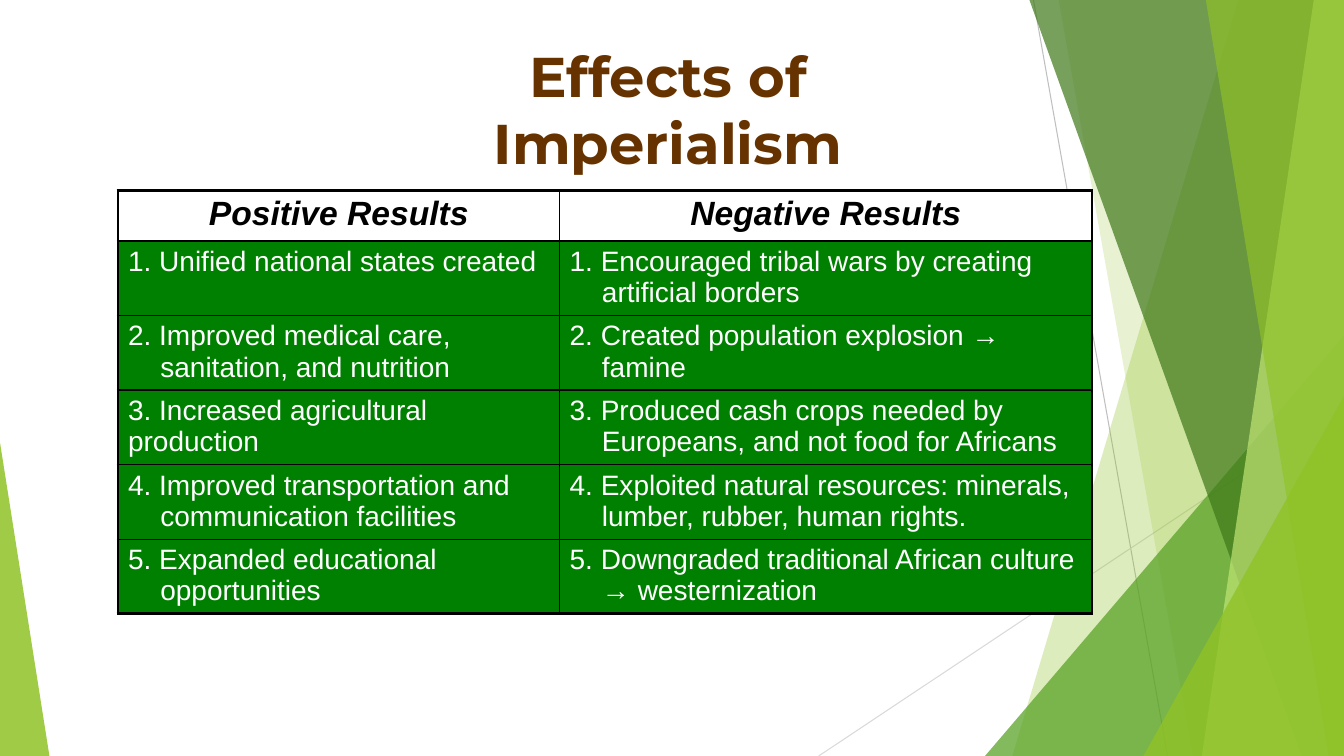
from dataclasses import dataclass

from lxml import etree
from pptx import Presentation
from pptx.dml.color import RGBColor
from pptx.enum.shapes import MSO_CONNECTOR, MSO_SHAPE
from pptx.enum.text import MSO_ANCHOR, MSO_AUTO_SIZE, PP_ALIGN
from pptx.oxml.ns import qn
from pptx.util import Inches, Pt

STRAIGHT = MSO_CONNECTOR.STRAIGHT
TRIANGLE = MSO_SHAPE.ISOSCELES_TRIANGLE
TOP = MSO_ANCHOR.TOP
NO_FIT = MSO_AUTO_SIZE.NONE
LEFT, CENTER = PP_ALIGN.LEFT, PP_ALIGN.CENTER


@dataclass(frozen=True)
class Theme:
    white: str = "FFFFFF"
    black: str = "000000"
    title_outline: str = "663300"
    cell_green: str = "008000"
    lime: str = "90C226"
    green: str = "54A021"
    dark_green: str = "3F7819"
    pale_lime: str = "C0E474"
    grey: str = "BFBFBF"
    light_grey: str = "D9D9D9"
    title_font: str = "Montserrat"
    body_font: str = "Arial"
    title_size: int = 40
    header_size: int = 24
    body_size: int = 20
    outer_border: float = 2.25
    inner_border: float = 1


THEME = Theme()
WIDTH, HEIGHT = 13.33, 7.5
HANGING = 0.32

HEADERS = ("Positive Results", "Negative Results")
# Positive result, its hanging indent, negative result
RESULTS = [
    ("1. Unified national states created", 0,
     "1. Encouraged tribal wars by creating artificial borders"),
    ("2. Improved medical care, sanitation, and nutrition", HANGING,
     "2. Created population explosion → famine"),
    ("3. Increased agricultural production", 0,
     "3. Produced cash crops needed by Europeans, and not food for Africans"),
    ("4. Improved transportation and communication facilities", HANGING,
     "4. Exploited natural resources: minerals, lumber, rubber, human rights."),
    ("5. Expanded educational opportunities", HANGING,
     "5. Downgraded traditional African culture → westernization"),
]


def add_node(parent, tag, **attributes):
    return etree.SubElement(parent, qn(tag), attributes)


def add_solid(parent, color):
    add_node(add_node(parent, "a:solidFill"), "a:srgbClr", val=color)


def write_text(frame, text, *, size, font=THEME.body_font, color=THEME.black,
               bold=False, italic=False, align=LEFT, hanging=0,
               space_before=None, outline=None):
    paragraph = frame.paragraphs[0]
    paragraph.alignment = align
    properties = paragraph._p.get_or_add_pPr()
    if hanging:
        properties.set("marL", str(Inches(hanging)))
        properties.set("indent", str(Inches(-hanging)))
    if space_before:
        spacing = add_node(properties, "a:spcBef")
        add_node(spacing, "a:spcPct", val=str(space_before * 1000))
    run = paragraph.add_run()
    run.text = text
    run.font.size = Pt(size)
    run.font.bold, run.font.italic = bold, italic
    if outline:
        # Hollow letters: only the contour is coloured
        line = add_node(run.font._element, "a:ln", w=str(Pt(3)))
        add_solid(line, outline)
        run.font.fill.background()
    else:
        run.font.color.rgb = RGBColor.from_string(color)
    run.font.name = font


def paint_facet(facet, color, opacity):
    facet.shadow.inherit = False
    facet.fill.solid()
    facet.fill.fore_color.rgb = RGBColor.from_string(color)
    facet.line.fill.background()
    tint = facet.fill._xPr.find(qn("a:solidFill"))[0]
    add_node(tint, "a:alpha", val=str(opacity * 1000))


def add_ray(slide, start, end, color):
    ray = slide.shapes.add_connector(
        STRAIGHT, *(Inches(value) for value in (*start, *end)))
    ray.line.color.rgb = RGBColor.from_string(color)
    ray.line.width = Pt(0.75)
    add_node(ray._element.spPr, "a:effectLst")


def add_blade(slide, box, top_x, bottom_x, color, opacity):
    """Facet with a slanted left edge, reaching to the right side of the box."""
    left, top, width, height = box
    right, bottom = left + width, top + height
    corners = [(Inches(x), Inches(y)) for x, y in (
        (left + top_x, top), (right, top), (right, bottom), (left + bottom_x, bottom))]
    outline = slide.shapes.build_freeform(*corners[0])
    outline.add_line_segments(corners[1:], close=True)
    paint_facet(outline.convert_to_shape(), color, opacity)


def add_wedge(slide, box, width, height, color, opacity, on_right=True):
    """Right triangle standing in a lower corner of the box."""
    left, top, box_width, box_height = box
    x = left + box_width - width if on_right else left
    wedge = slide.shapes.add_shape(
        TRIANGLE, Inches(x), Inches(top + box_height - height),
        Inches(width), Inches(height))
    wedge.adjustments[0] = 1 if on_right else 0
    paint_facet(wedge, color, opacity)


def draw_facets(slide, box):
    left, top, width, height = box
    right, bottom = left + width, top + height
    add_ray(slide, (left + 10.25, top), (left + 11.58, bottom), THEME.grey)
    add_ray(slide, (right, top + 4.03), (left + 8.12, bottom), THEME.light_grey)
    add_blade(slide, box, 12.28, 10.04, THEME.lime, 30)
    add_blade(slide, box, 10.5, 11.83, THEME.lime, 20)
    add_wedge(slide, box, 3.56, 4.17, THEME.green, 72)
    add_blade(slide, box, 10.21, 12.91, THEME.dark_green, 70)
    add_blade(slide, box, 13.03, 11.92, THEME.pale_lime, 70)
    add_blade(slide, box, 11.96, 13.18, THEME.lime, 65)
    add_wedge(slide, box, 1.99, 3.57, THEME.lime, 80)
    add_wedge(slide, box, 0.49, 3.11, THEME.lime, 85, on_right=False)


def draw_title(slide, box):
    title = slide.shapes.title
    title.left, title.top, title.width, title.height = (Inches(v) for v in box)
    frame = title.text_frame
    frame.word_wrap = False
    frame.auto_size = NO_FIT
    frame.vertical_anchor = TOP
    frame.margin_top = Inches(0.08)
    write_text(frame, "Effects of Imperialism", size=THEME.title_size,
               font=THEME.title_font, bold=True, align=CENTER,
               outline=THEME.title_outline)


def format_cell(cell, fill, outer_sides):
    """Heavy lines on the outer sides, thin ones elsewhere."""
    properties = cell._tc.get_or_add_tcPr()
    for side in "LRTB":
        weight = THEME.outer_border if side in outer_sides else THEME.inner_border
        border = add_node(properties, f"a:ln{side}", w=str(Pt(weight)))
        add_solid(border, THEME.black)
    cell.fill.solid()
    cell.fill.fore_color.rgb = RGBColor.from_string(fill)


def draw_results(slide, box):
    left, top, width, height = box
    positive_width, header_height = 4.38, 0.5
    row_height = (height - header_height) / len(RESULTS)
    table = slide.shapes.add_table(
        len(RESULTS) + 1, len(HEADERS), *(Inches(v) for v in box)).table
    table.first_row = table.horz_banding = False
    table.columns[0].width = Inches(positive_width)
    table.columns[1].width = Inches(width - positive_width)
    for index, row in enumerate(table.rows):
        row.height = Inches(row_height if index else header_height)
        vertical = {0: "T", len(RESULTS): "B"}.get(index, "")
        for cell, side in zip(row.cells, "LR"):
            format_cell(cell, THEME.cell_green if index else THEME.white,
                        side + vertical)

    # Header row
    for column, header in enumerate(HEADERS):
        write_text(table.cell(0, column).text_frame, header, size=THEME.header_size,
                   bold=True, italic=True, align=CENTER, space_before=20)
    # Numbered results
    for index, (positive, indent, negative) in enumerate(RESULTS, start=1):
        for column, (result, hanging) in enumerate(
                ((positive, indent), (negative, HANGING))):
            write_text(table.cell(index, column).text_frame, result,
                       size=THEME.body_size, color=THEME.white,
                       hanging=hanging, space_before=20)


def main():
    deck = Presentation()
    deck.slide_width, deck.slide_height = Inches(WIDTH), Inches(HEIGHT)
    slide = deck.slides.add_slide(deck.slide_layouts.get_by_name("Title Only"))
    draw_facets(slide, (0, 0, WIDTH, HEIGHT))
    draw_title(slide, (3.5, 0.33, 6.25, 1))
    draw_results(slide, (1.17, 1.89, 9.66, 4.2))
    deck.save("out.pptx")


if __name__ == "__main__":
    main()
